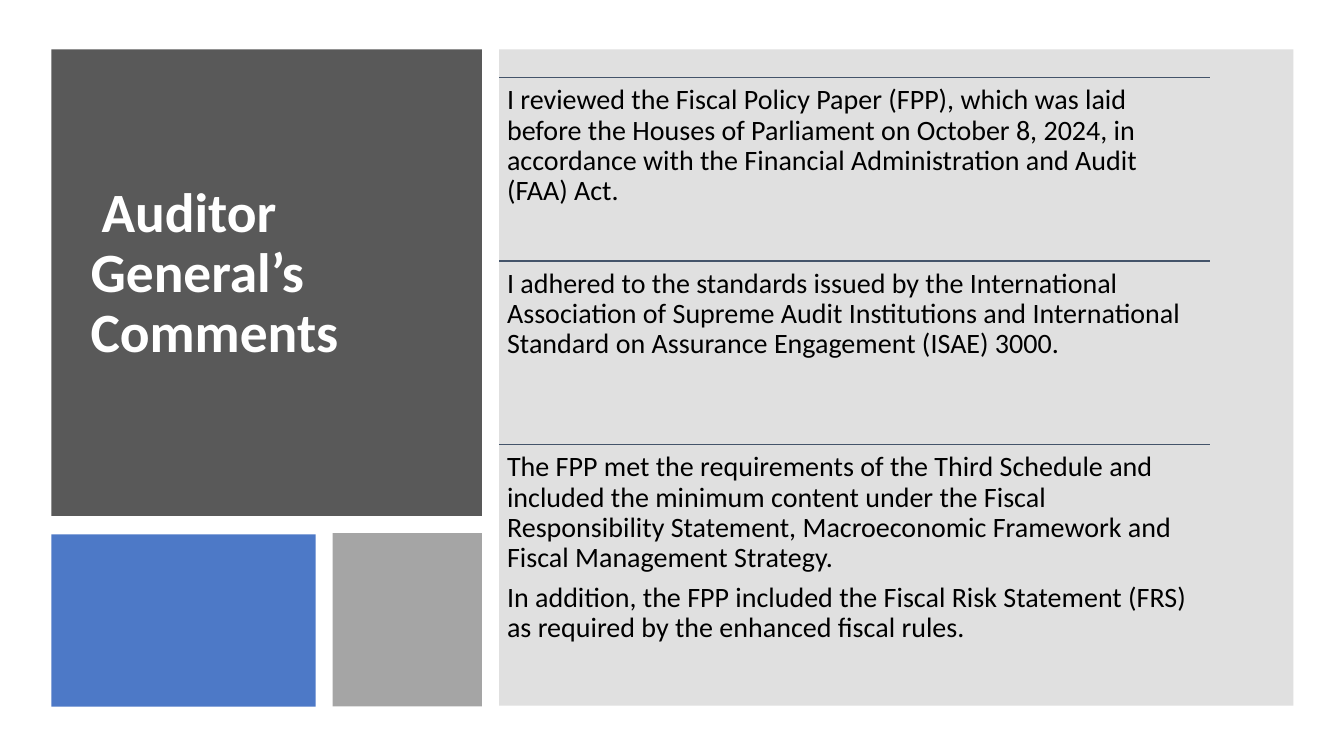
import pptx
import pptx.dml.color
import pptx.enum.shapes
import pptx.enum.text
import pptx.util
from lxml import etree


def color(value):
    return pptx.dml.color.RGBColor.from_string(value)


class Deck:
    """Draws styled elements on one slide, with lengths in percent of its size."""

    FONT = "Calibri"
    RULE = "44546A"

    def __init__(self):
        self.prs = pptx.Presentation()
        self.prs.slide_width = pptx.util.Inches(13.33)
        self.prs.slide_height = pptx.util.Inches(7.5)
        self.s = self.prs.slides.add_slide(self.prs.slide_layouts[6])

    def x(self, share):
        return round(self.prs.slide_width * share / 100)

    def y(self, share):
        return round(self.prs.slide_height * share / 100)

    def box(self, left, top, width, height):
        return self.x(left), self.y(top), self.x(width), self.y(height)

    def panel(self, area, fill, opacity=100):
        sp = self.s.shapes.add_shape(
            pptx.enum.shapes.MSO_SHAPE.RECTANGLE, *self.box(*area))
        sp.shadow.inherit = False
        sp.line.fill.background()
        sp.fill.solid()
        sp.fill.fore_color.rgb = color(fill)
        if opacity < 100:
            clr = sp.fill._xPr.find(".//" + pptx.oxml.ns.qn("a:srgbClr"))
            etree.SubElement(clr, pptx.oxml.ns.qn("a:alpha"), val=str(opacity * 1000))

    def rule(self, left, top, width):
        y = self.y(top)
        cx = self.s.shapes.add_connector(
            pptx.enum.shapes.MSO_CONNECTOR.STRAIGHT,
            self.x(left), y, self.x(left + width), y)
        cx.line.color.rgb = color(self.RULE)
        cx.line.width = pptx.util.Pt(1)
        etree.SubElement(cx._element.spPr, pptx.oxml.ns.qn("a:effectLst"))

    def text(self, area, paragraphs, size, fill, bold=False, inset=0.08,
             anchor=pptx.enum.text.MSO_ANCHOR.TOP, after=7, indent=0):
        tf = self.s.shapes.add_textbox(*self.box(*area)).text_frame
        tf.word_wrap = True
        tf.vertical_anchor = anchor
        tf.margin_left = tf.margin_right = pptx.util.Inches(inset)
        tf.margin_top = tf.margin_bottom = pptx.util.Inches(0.08)
        for i, words in enumerate(paragraphs):
            p = tf.add_paragraph() if i else tf.paragraphs[0]
            p.line_spacing = 0.9
            p.space_after = pptx.util.Pt(after)
            if indent:
                p._p.get_or_add_pPr().set("indent", str(pptx.util.Inches(indent)))
            r = p.add_run()
            r.text = words
            r.font.name = self.FONT
            r.font.size = pptx.util.Pt(size)
            r.font.bold = bold
            r.font.color.rgb = color(fill)


COMMENTS = [
    ["I reviewed the Fiscal Policy Paper (FPP), which was laid before the Houses of "
     "Parliament on October 8, 2024, in accordance with the Financial Administration "
     "and Audit (FAA) Act."],
    ["I adhered to the standards issued by the International Association of Supreme "
     "Audit Institutions and International Standard on Assurance Engagement (ISAE) 3000."],
    ["The FPP met the requirements of the Third Schedule and included the minimum "
     "content under the Fiscal Responsibility Statement, Macroeconomic Framework and "
     "Fiscal Management Strategy.",
     "In addition, the FPP included the Fiscal Risk Statement (FRS) as required by the "
     "enhanced fiscal rules."],
]


def main():
    deck = Deck()
    deck.panel((3.83, 6.53, 32.03, 61.73), "595959")
    deck.text((6, 15.6, 27.6, 41.47), ["Auditor General’s Comments"], 39.6, "FFFFFF",
              bold=True, inset=0.1, anchor=pptx.enum.text.MSO_ANCHOR.MIDDLE,
              after=0, indent=0.11)
    deck.panel((3.83, 70.67, 19.65, 22.8), "4472C4", opacity=95)
    deck.panel((37.13, 6.53, 59.11, 86.8), "7F7F7F", opacity=24)
    deck.panel((24.76, 70.53, 11.1, 22.93), "A5A5A5")

    left, width, first, pitch = 37.13, 52.89, 10.27, 24.27
    for i, paragraphs in enumerate(COMMENTS):
        top = first + i * pitch
        deck.rule(left, top, width)
        height = 35.47 if len(paragraphs) > 1 else pitch
        deck.text((left, top, width, height), paragraphs, 20, "000000")
    deck.prs.save("out.pptx")


if __name__ == "__main__":
    main()
